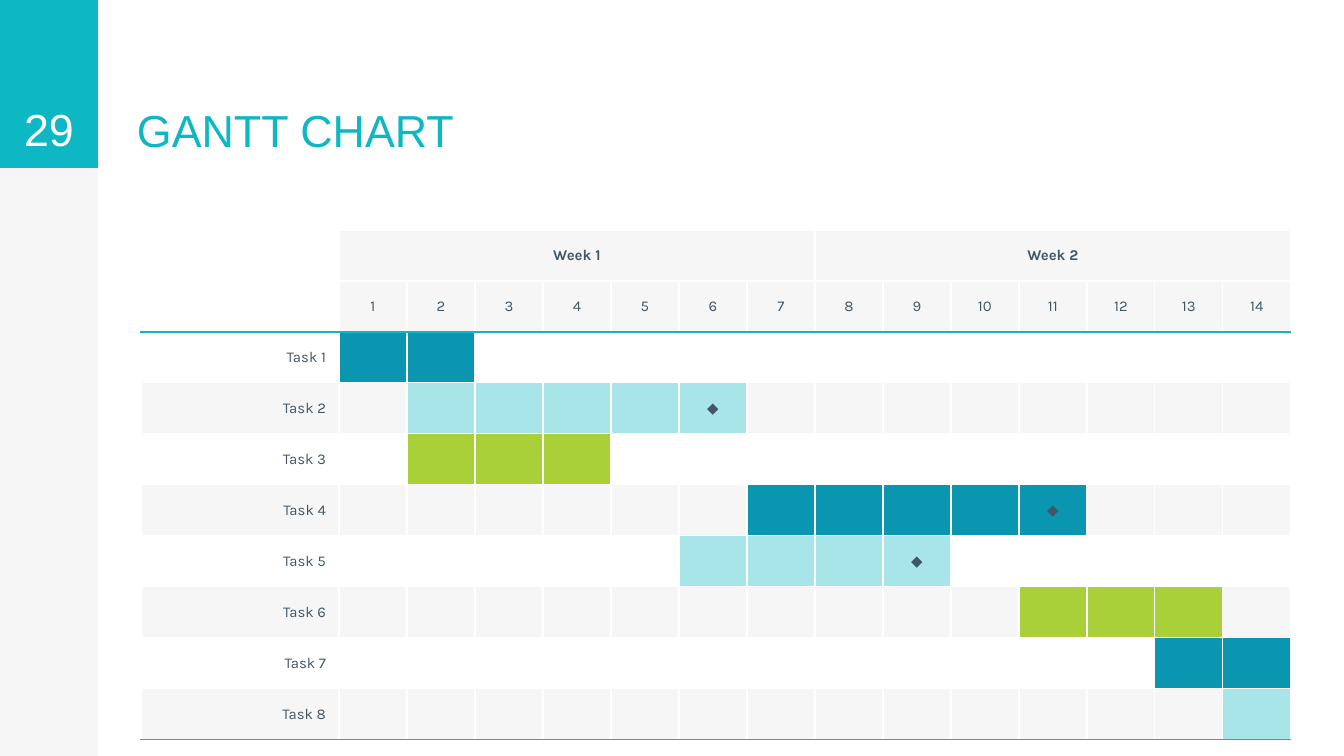
from dataclasses import dataclass

from lxml import etree
from pptx import Presentation
from pptx import util as u
from pptx.dml import color
from pptx.enum import shapes, text
from pptx.oxml import ns

SCALE = 9144000 / 1344
SIDES = ("lnL", "lnR", "lnT", "lnB")


def px(n):
    return u.Emu(round(n * SCALE))


def rgb(code):
    return color.RGBColor.from_string(code)


@dataclass(frozen=True)
class Theme:
    teal: str = "0DB7C4"
    white: str = "FFFFFF"
    pale: str = "F6F6F6"
    ink: str = "415665"
    blue: str = "0A95B0"
    aqua: str = "A7E5E9"
    lime: str = "A9D039"
    head: str = "Arial"
    body: str = "Karla"
    big: int = 24
    small: int = 8
    rule: float = 0.75


class Deck:
    def __init__(self, theme):
        self.theme = theme
        self.file = Presentation()
        self.file.slide_width = px(1344)
        self.file.slide_height = px(756)
        self.slide = self.file.slides.add_slide(self.file.slide_layouts[6])

    def rect(self, x, y, w, h, fill):
        box = self.slide.shapes.add_shape(
            shapes.MSO_SHAPE.RECTANGLE, px(x), px(y), px(w), px(h))
        box.shadow.inherit = False
        box.fill.solid()
        box.fill.fore_color.rgb = rgb(fill)
        box.line.fill.background()

    def run(self, para, words, font, size, ink, bold=False):
        run = para.add_run()
        run.text = words
        run.font.name = font
        run.font.size = u.Pt(size)
        run.font.bold = bold
        run.font.color.rgb = rgb(ink)

    def label(self, x, y, w, h, words, ink, align):
        frame = self.slide.shapes.add_textbox(
            px(x), px(y), px(w), px(h)).text_frame
        frame.word_wrap = True
        frame.vertical_anchor = text.MSO_ANCHOR.BOTTOM
        frame.margin_left = frame.margin_right = px(13)
        frame.margin_top = frame.margin_bottom = px(13)
        para = frame.paragraphs[0]
        para.alignment = align
        self.run(para, words, self.theme.head, self.theme.big, ink)

    def grid(self, x, y, cols, rows):
        table = self.slide.shapes.add_table(
            len(rows), len(cols), px(x), px(y),
            px(sum(cols)), px(sum(rows))).table
        table.first_row = table.horz_banding = False
        for col, w in zip(table.columns, cols):
            col.width = px(w)
        for row, h in zip(table.rows, rows):
            row.height = px(h)
        return table

    def edges(self, cell, tints):
        props = cell._tc.get_or_add_tcPr()
        for i, (side, tint) in enumerate(zip(SIDES, tints)):
            line = etree.Element(ns.qn("a:" + side))
            line.set("w", str(u.Pt(self.theme.rule)))
            fill = etree.SubElement(line, ns.qn("a:solidFill"))
            etree.SubElement(fill, ns.qn("a:srgbClr")).set("val", tint)
            props.insert(i, line)

    def cell(self, cell, words, fill, align, tints, bold=False):
        cell.margin_left = cell.margin_right = px(13)
        cell.margin_top = cell.margin_bottom = px(7)
        cell.vertical_anchor = text.MSO_ANCHOR.MIDDLE
        if fill:
            cell.fill.solid()
            cell.fill.fore_color.rgb = rgb(fill)
        else:
            cell.fill.background()
        self.edges(cell, tints)
        para = cell.text_frame.paragraphs[0]
        para.alignment = align
        if words:
            self.run(para, words, self.theme.body, self.theme.small,
                     self.theme.ink, bold)
        else:
            end = etree.SubElement(para._p, ns.qn("a:endParaRPr"))
            end.set("sz", str(self.theme.small * 100))

    def gantt(self, x, y, tasks, days, week):
        t = self.theme
        last = len(tasks) + 1
        table = self.grid(x, y, [198] + [68] * days, [51] * (last + 1))
        for start in range(1, days + 1, week):
            table.cell(0, start).merge(table.cell(0, start + week - 1))
        for r in range(last + 1):
            top = t.teal if r == 2 else t.white
            low = t.teal if r in (1, last) else t.white
            tints = (t.white, t.white, top, low)
            for c in range(days + 1):
                words = ""
                align = text.PP_ALIGN.CENTER
                if r < 2:
                    fill = t.pale if c else None
                    if r and c:
                        words = str(c)
                    elif c % week == 1:
                        words = f"Week {c // week + 1}"
                else:
                    first, final, tint, mark = tasks[r - 2]
                    fill = t.pale if r % 2 else None
                    if first <= c <= final:
                        fill = tint
                    if c == 0:
                        words = f"Task {r - 1}"
                        align = text.PP_ALIGN.RIGHT
                    elif mark and c == final:
                        words = "◆"
                self.cell(table.cell(r, c), words, fill, align, tints, r == 0)


def main():
    t = Theme()
    deck = Deck(t)
    deck.rect(0, 0, 98, 756, t.pale)
    deck.rect(0, 0, 98, 168, t.teal)
    deck.label(124, 1, 523, 168, "GANTT CHART", t.teal, text.PP_ALIGN.LEFT)
    deck.label(0, 0, 98, 168, "29", t.white, text.PP_ALIGN.CENTER)
    tasks = [
        (1, 2, t.blue, False),
        (2, 6, t.aqua, True),
        (2, 4, t.lime, False),
        (7, 11, t.blue, True),
        (6, 9, t.aqua, True),
        (11, 13, t.lime, False),
        (13, 14, t.blue, False),
        (14, 14, t.aqua, False),
    ]
    deck.gantt(141, 230, tasks, 14, 7)
    deck.file.save("out.pptx")


if __name__ == "__main__":
    main()
